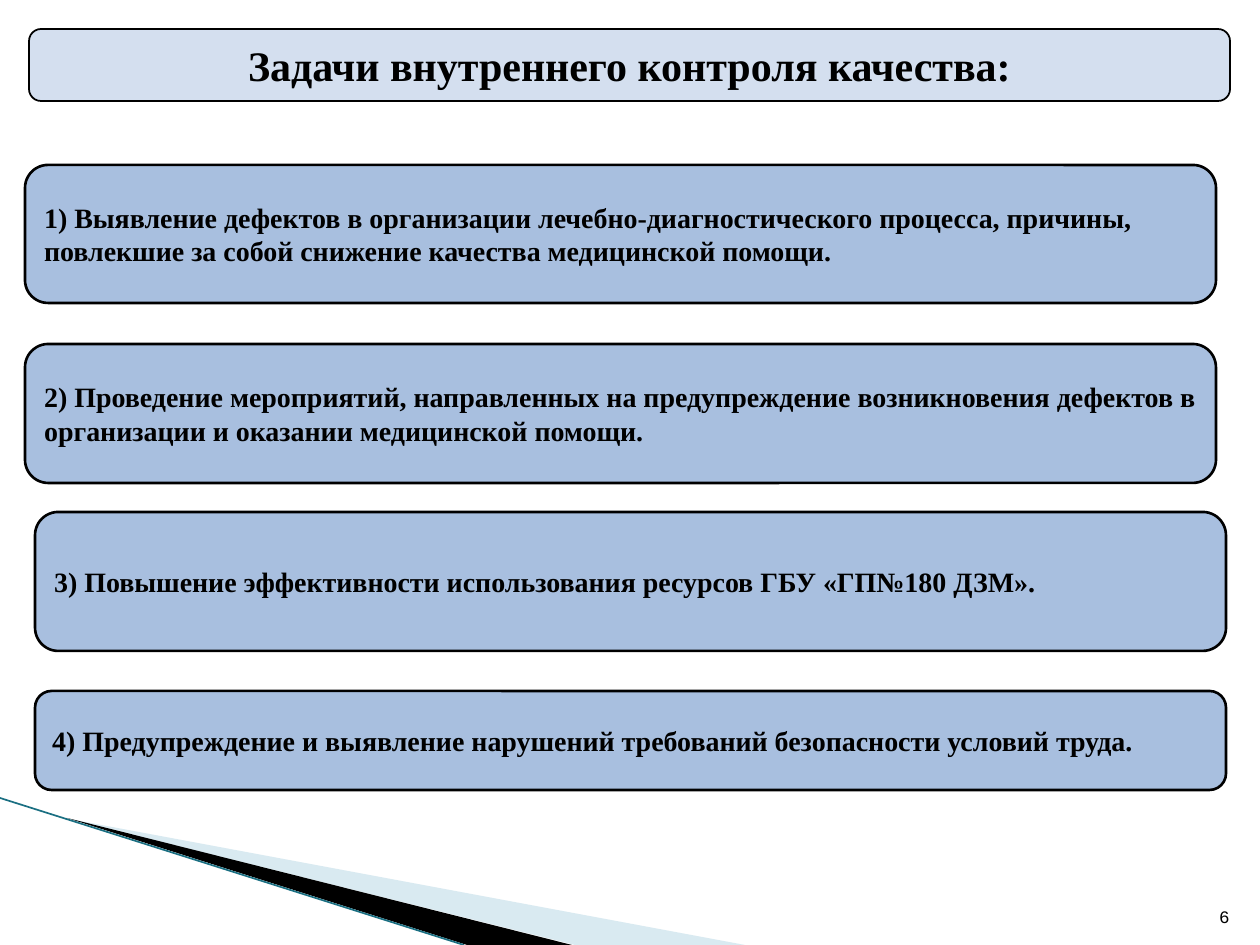
from dataclasses import dataclass
from lxml.etree import SubElement
from pptx import Presentation
from pptx.dml.color import RGBColor
from pptx.enum.shapes import MSO_CONNECTOR, MSO_SHAPE
from pptx.enum.text import MSO_ANCHOR, PP_ALIGN
from pptx.oxml.ns import qn
from pptx.util import Pt

SCALE = 914400 / 126


@dataclass(frozen=True)
class Theme:
    black: str = "000000"
    title_fill: str = "D4DFEF"
    task_fill: str = "A8BFDF"
    wedge_fill: str = "A0CBDC"
    edge_line: str = "1A6F82"
    serif: str = "Times New Roman"
    mono: str = "Courier New"
    title_size: int = 24
    task_size: int = 16
    number_size: int = 10


theme = Theme()

TITLE = ("Задачи внутреннего контроля качества:", (29, 29, 1201, 72))
TASK_WIDTH = 1191
TASKS = [
    ("1) Выявление дефектов в организации лечебно-диагностического процесса, причины, "
     "повлекшие за собой снижение качества медицинской помощи.", 25, 165, 138),
    ("2) Проведение мероприятий, направленных на предупреждение возникновения дефектов "
     "в организации и оказании медицинской помощи.", 25, 344, 139),
    ("3) Повышение эффективности использования ресурсов ГБУ «ГП№180 ДЗМ».", 35, 512, 139),
    ("4) Предупреждение и выявление нарушений требований безопасности условий труда.",
     35, 691, 99),
]
PAGE_NUMBER = ("6", (1192, 883, 50, 50))
WEDGES = [
    ([(69, 819), (745, 945), (575, 945)], theme.wedge_fill, 40),
    ([(67, 818), (572, 945), (467, 945)], theme.black, 100),
]
EDGE = (0, 798, 464, 945)


def px(*lengths):
    return [round(length * SCALE) for length in lengths]


def color(value):
    return RGBColor.from_string(value)


def write(shape, text, *, size, font, bold=False, align=PP_ALIGN.LEFT,
          anchor=MSO_ANCHOR.MIDDLE):
    frame = shape.text_frame
    frame.word_wrap = True
    frame.vertical_anchor = anchor
    paragraph = frame.paragraphs[0]
    paragraph.alignment = align
    run = paragraph.add_run()
    run.text = text
    run.font.size = Pt(size)
    run.font.name = font
    run.font.bold = bold
    run.font.color.rgb = color(theme.black)


def add_panel(slide, text, box, fill, line_width, **text_format):
    shape = slide.shapes.add_shape(MSO_SHAPE.ROUNDED_RECTANGLE, *px(*box))
    shape.shadow.inherit = False
    shape.fill.solid()
    shape.fill.fore_color.rgb = color(fill)
    shape.line.color.rgb = color(theme.black)
    shape.line.width = Pt(line_width)
    write(shape, text, font=theme.serif, bold=True, **text_format)


def add_wedge(slide, points, fill, opacity):
    builder = slide.shapes.build_freeform(*points[0], scale=SCALE)
    builder.add_line_segments(points[1:], close=True)
    shape = builder.convert_to_shape()
    shape.shadow.inherit = False
    shape.fill.solid()
    shape.fill.fore_color.rgb = color(fill)
    shape.line.fill.background()
    if opacity < 100:
        fill_color = shape.element.spPr.find(qn("a:solidFill"))[0]
        SubElement(fill_color, qn("a:alpha"), val=str(opacity * 1000))


def add_edge(slide):
    connector = slide.shapes.add_connector(MSO_CONNECTOR.STRAIGHT, *px(*EDGE))
    connector.line.color.rgb = color(theme.edge_line)
    connector.line.width = Pt(0.95)
    SubElement(connector.element.spPr, qn("a:effectLst"))


def main():
    presentation = Presentation()
    presentation.slide_width, presentation.slide_height = px(1260, 945)
    slide = presentation.slides.add_slide(presentation.slide_layouts[6])

    for wedge in WEDGES:
        add_wedge(slide, *wedge)
    add_edge(slide)

    add_panel(slide, *TITLE, theme.title_fill, 1,
              size=theme.title_size, align=PP_ALIGN.CENTER)
    for text, left, top, height in TASKS:
        add_panel(slide, text, (left, top, TASK_WIDTH, height), theme.task_fill, 1.5,
                  size=theme.task_size)

    number, box = PAGE_NUMBER
    write(slide.shapes.add_textbox(*px(*box)), number, size=theme.number_size,
          font=theme.mono, align=PP_ALIGN.RIGHT, anchor=MSO_ANCHOR.BOTTOM)
    presentation.save("out.pptx")


if __name__ == "__main__":
    main()
